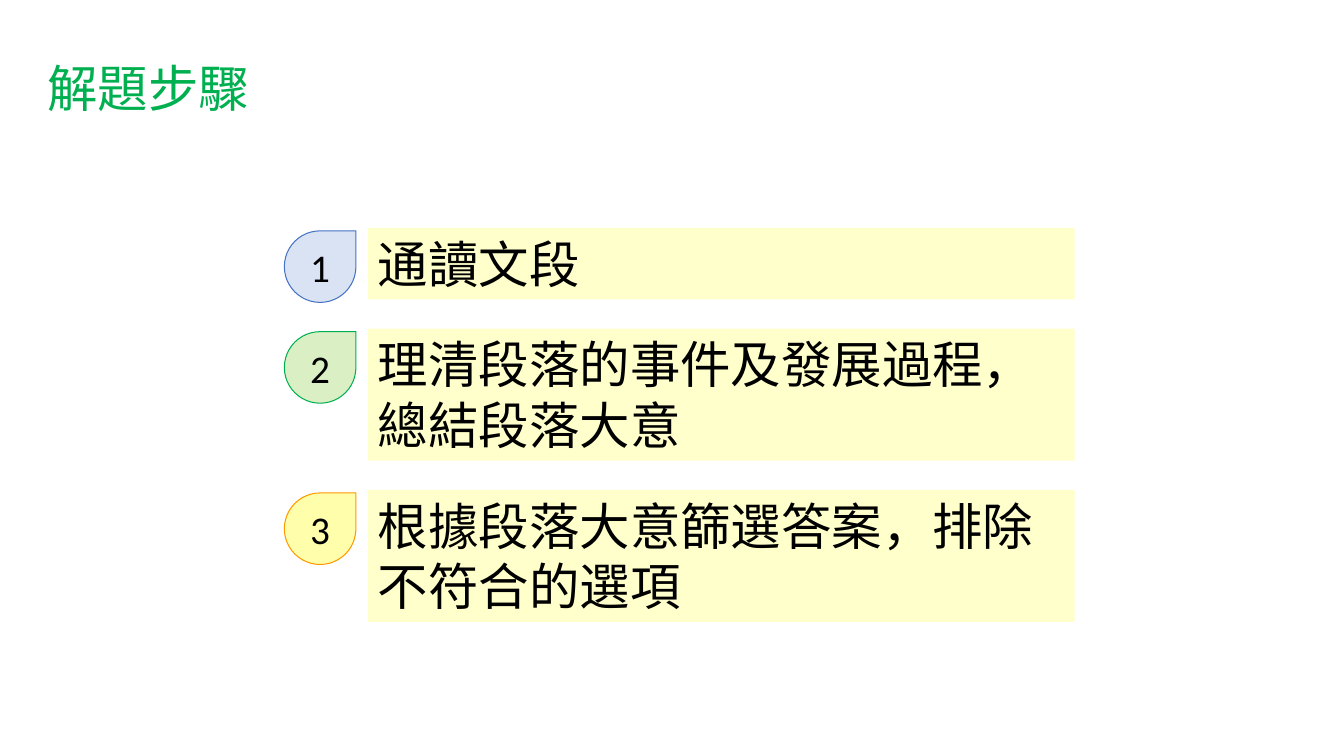
from dataclasses import dataclass

from lxml import etree
from pptx import Presentation
from pptx import util as u
from pptx.dml.color import RGBColor
from pptx.enum import shapes, text
from pptx.oxml import ns

COLOURS = {
    "ink": "000000",
    "panel": "FFFFCC",
    "title": "00B050",
    "blue": "8FAADC",
    "blue_line": "4472C4",
    "green": "92D050",
    "green_line": "00B050",
    "yellow": "FFFF00",
    "yellow_line": "FF9900",
}

TITLE_FORMAT = {"name": "Noto Sans CJK SC", "size": u.Pt(36)}
STEP_FORMAT = {"name": "Roboto", "size": u.Pt(36)}
NUMBER_FORMAT = {"name": "Calibri", "size": u.Pt(28)}

FIRST_TOP = 2.26
STEP_GAP = 0.29
PANEL_LEFT = 3.65
PANEL_WIDTH = 7.01
BADGE_LEFT = 2.82
BADGE_SIZE = 0.71
BADGE_DROP = 0.03
BADGE_OPACITY = 33


@dataclass(frozen=True)
class Step:
    wording: str
    height: float
    colour: str


STEPS = [
    Step("通讀文段", 0.71, "blue"),
    Step("理清段落的事件及發展過程，總結段落大意", 1.31, "green"),
    Step("根據段落大意篩選答案，排除不符合的選項", 1.31, "yellow"),
]


def colour_of(name: str) -> RGBColor:
    return RGBColor.from_string(COLOURS[name])


def write_text(shape, wording: str, font_format: dict, colour: str,
               alignment, frame_format: dict) -> None:
    frame = shape.text_frame
    for attribute, value in frame_format.items():
        setattr(frame, attribute, value)
    paragraph = frame.paragraphs[0]
    paragraph.alignment = alignment
    run = paragraph.add_run()
    run.text = wording
    for attribute, value in font_format.items():
        setattr(run.font, attribute, value)
    run.font.color.rgb = colour_of(colour)


def add_filled_shape(slide, kind, left: float, top: float,
                     width: float, height: float, colour: str):
    shape = slide.shapes.add_shape(
        kind, u.Inches(left), u.Inches(top), u.Inches(width), u.Inches(height))
    shape.shadow.inherit = False
    shape.fill.solid()
    shape.fill.fore_color.rgb = colour_of(colour)
    return shape


def set_opacity(shape, percent: int) -> None:
    fill = shape._element.spPr.find(ns.qn("a:solidFill"))
    alpha = etree.SubElement(fill[0], ns.qn("a:alpha"))
    alpha.set("val", str(percent * 1000))


def add_panel(slide, step: Step, top: float) -> None:
    panel = add_filled_shape(slide, shapes.MSO_SHAPE.RECTANGLE, PANEL_LEFT, top,
                             PANEL_WIDTH, step.height, "panel")
    panel.line.fill.background()
    write_text(panel, step.wording, STEP_FORMAT, "ink", text.PP_ALIGN.LEFT, {
        "word_wrap": True,
        "vertical_anchor": text.MSO_ANCHOR.TOP,
        "auto_size": text.MSO_AUTO_SIZE.SHAPE_TO_FIT_TEXT,
    })


def add_badge(slide, number: int, step: Step, top: float) -> None:
    badge = add_filled_shape(slide, shapes.MSO_SHAPE.TEAR, BADGE_LEFT,
                             top + BADGE_DROP, BADGE_SIZE, BADGE_SIZE, step.colour)
    set_opacity(badge, BADGE_OPACITY)
    badge.line.color.rgb = colour_of(f"{step.colour}_line")
    badge.line.width = u.Pt(0.75)
    write_text(badge, str(number), NUMBER_FORMAT, "ink", text.PP_ALIGN.CENTER,
               {"vertical_anchor": text.MSO_ANCHOR.MIDDLE})


def place_title(slide, wording: str) -> None:
    title = slide.shapes.title
    position = {"left": 0.37, "top": 0.52, "width": 2.22, "height": 0.71}
    for attribute, value in position.items():
        setattr(title, attribute, u.Inches(value))
    write_text(title, wording, TITLE_FORMAT, "title", text.PP_ALIGN.LEFT, {
        "word_wrap": False,
        "vertical_anchor": text.MSO_ANCHOR.TOP,
        "auto_size": text.MSO_AUTO_SIZE.SHAPE_TO_FIT_TEXT,
    })


def main() -> None:
    presentation = Presentation()
    presentation.slide_width = u.Inches(13.33)
    presentation.slide_height = u.Inches(7.5)
    slide = presentation.slides.add_slide(
        presentation.slide_layouts.get_by_name("Title Only"))
    place_title(slide, "解題步驟")
    top = FIRST_TOP
    for number, step in enumerate(STEPS, start=1):
        add_panel(slide, step, top)
        add_badge(slide, number, step, top)
        top += step.height + STEP_GAP
    presentation.save("out.pptx")


if __name__ == "__main__":
    main()
